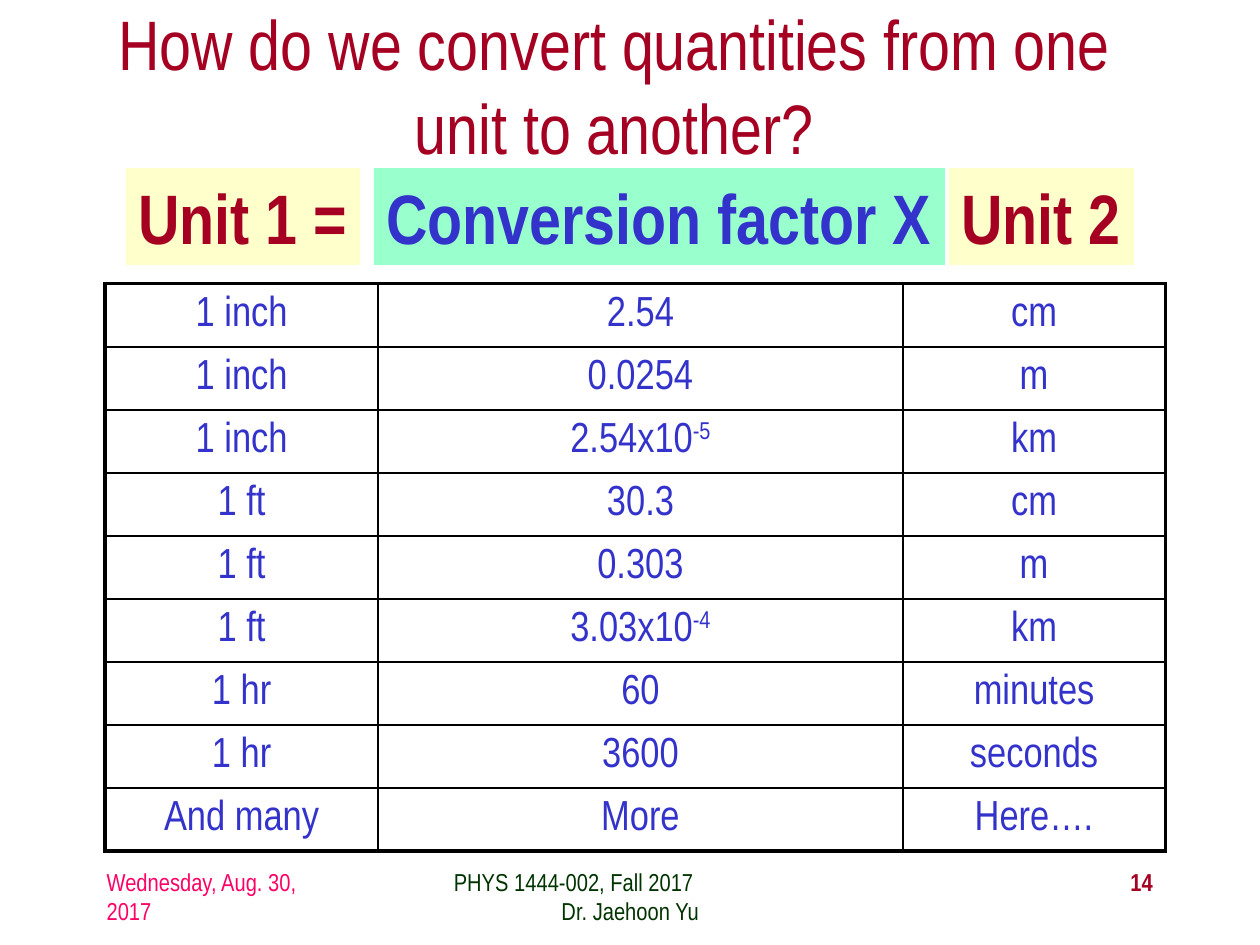
from dataclasses import dataclass

from lxml import etree
from pptx import Presentation
from pptx.dml.color import RGBColor
from pptx.enum.shapes import MSO_SHAPE
from pptx.enum.text import MSO_ANCHOR, MSO_AUTO_SIZE, PP_ALIGN
from pptx.oxml.ns import qn
from pptx.util import Cm, Pt

LEFT, CENTER, RIGHT = PP_ALIGN.LEFT, PP_ALIGN.CENTER, PP_ALIGN.RIGHT
MIDDLE = MSO_ANCHOR.MIDDLE
RECT = MSO_SHAPE.RECTANGLE
FIT_SHAPE, NO_FIT = MSO_AUTO_SIZE.SHAPE_TO_FIT_TEXT, MSO_AUTO_SIZE.NONE


@dataclass(frozen=True)
class Theme:
    font: str = "Arial Narrow"
    red: str = "A50021"
    blue: str = "3333CC"
    pink: str = "FF0066"
    green: str = "003300"
    yellow: str = "FFFFCC"
    mint: str = "99FFCC"
    border: str = "000000"
    title_size: int = 40
    table_size: int = 24
    footer_size: int = 14
    outer_line: float = 2.25
    inner_line: float = 1


T = Theme()

TITLE = "How do we convert quantities from one unit to another?"
FORMULA = [
    ("Unit 1 =", 2.54, 4.72, T.yellow, T.red),
    ("Unit 2", 19.13, 3.73, T.yellow, T.red),
    ("Conversion factor X", 7.54, 11.51, T.mint, T.blue),
]
CONVERSIONS = [
    ("1 inch", "2.54", "cm"),
    ("1 inch", "0.0254", "m"),
    ("1 inch", "2.54x10^-5", "km"),
    ("1 ft", "30.3", "cm"),
    ("1 ft", "0.303", "m"),
    ("1 ft", "3.03x10^-4", "km"),
    ("1 hr", "60", "minutes"),
    ("1 hr", "3600", "seconds"),
    ("And many", "More", "Here…."),
]
COL_WIDTHS = [5.5, 10.58, 5.29]
ROW_HEIGHT = 1.27
FOOTERS = [
    (1.9, 5.29, T.pink, False, [("Wednesday, Aug. 30, 2017", LEFT, 0)]),
    (8.68, 8.05, T.green, False,
     [("PHYS 1444-002, Fall 2017", LEFT, 0.22), ("Dr. Jaehoon Yu", CENTER, 0)]),
    (18.2, 5.29, T.red, True, [("14", RIGHT, 0)]),
]


def style(p, size, color, bold=False, align=LEFT):
    p.alignment = align
    for r in p.runs:
        r.font.name = T.font
        r.font.size = Pt(size)
        r.font.bold = bold
        r.font.color.rgb = RGBColor.from_string(color)


def add_footer(s, left, width, color, bold, lines):
    tf = s.shapes.add_textbox(Cm(left), Cm(17.35), Cm(width), Cm(1.27)).text_frame
    tf.word_wrap = True
    tf.text = "\n".join(text for text, _, _ in lines)
    for p, (_, align, indent) in zip(tf.paragraphs, lines):
        if indent:
            p._p.get_or_add_pPr().set("marL", str(Cm(indent)))
        style(p, T.footer_size, color, bold, align)


def add_formula_part(s, text, left, width, fill, color):
    sp = s.shapes.add_shape(RECT, Cm(left), Cm(3.39), Cm(width), Cm(1.95))
    sp.shadow.inherit = False
    sp.fill.solid()
    sp.fill.fore_color.rgb = RGBColor.from_string(fill)
    sp.line.fill.background()
    tf = sp.text_frame
    tf.word_wrap = False
    tf.auto_size = FIT_SHAPE
    tf.vertical_anchor = MSO_ANCHOR.TOP
    tf.text = text
    style(tf.paragraphs[0], T.title_size, color, True)


def set_borders(cell, outer_sides):
    tc_pr = cell._tc.get_or_add_tcPr()
    for side, is_outer in zip("LRTB", outer_sides):
        width = T.outer_line if is_outer else T.inner_line
        ln = etree.SubElement(tc_pr, qn(f"a:ln{side}"), w=str(Pt(width)))
        fill = etree.SubElement(ln, qn("a:solidFill"))
        etree.SubElement(fill, qn("a:srgbClr"), val=T.border)


def fill_cell(cell, text):
    base, _, exponent = text.partition("^")
    cell.vertical_anchor = MIDDLE
    p = cell.text_frame.paragraphs[0]
    p.text = base
    if exponent:
        r = p.add_run()
        r.text = exponent
        r.font._element.set("baseline", "30000")
    style(p, T.table_size, T.blue, align=CENTER)


def add_conversion_table(s):
    n_rows, n_cols = len(CONVERSIONS), len(COL_WIDTHS)
    table = s.shapes.add_table(n_rows, n_cols, Cm(2.12), Cm(5.72),
                               Cm(sum(COL_WIDTHS)), Cm(ROW_HEIGHT * n_rows)).table
    table.first_row = False
    table.horz_banding = False
    for col, width in zip(table.columns, COL_WIDTHS):
        col.width = Cm(width)
    for i, values in enumerate(CONVERSIONS):
        table.rows[i].height = Cm(ROW_HEIGHT)
        for j, text in enumerate(values):
            cell = table.cell(i, j)
            fill_cell(cell, text)
            set_borders(cell, (j == 0, j == n_cols - 1, i == 0, i == n_rows - 1))
            cell.fill.background()


def main():
    prs = Presentation()
    prs.slide_width, prs.slide_height = Cm(25.4), Cm(19.05)
    s = prs.slides.add_slide(prs.slide_layouts[5])

    title = s.shapes.title
    title.left, title.top, title.width, title.height = Cm(1.9), Cm(0), Cm(20.96), Cm(3.39)
    tf = title.text_frame
    tf.text = TITLE
    tf.word_wrap = True
    tf.auto_size = NO_FIT
    tf.vertical_anchor = MIDDLE
    style(tf.paragraphs[0], T.title_size, T.red, align=CENTER)

    for footer in FOOTERS:
        add_footer(s, *footer)
    for part in FORMULA:
        add_formula_part(s, *part)
    add_conversion_table(s)
    prs.save("out.pptx")


if __name__ == "__main__":
    main()
